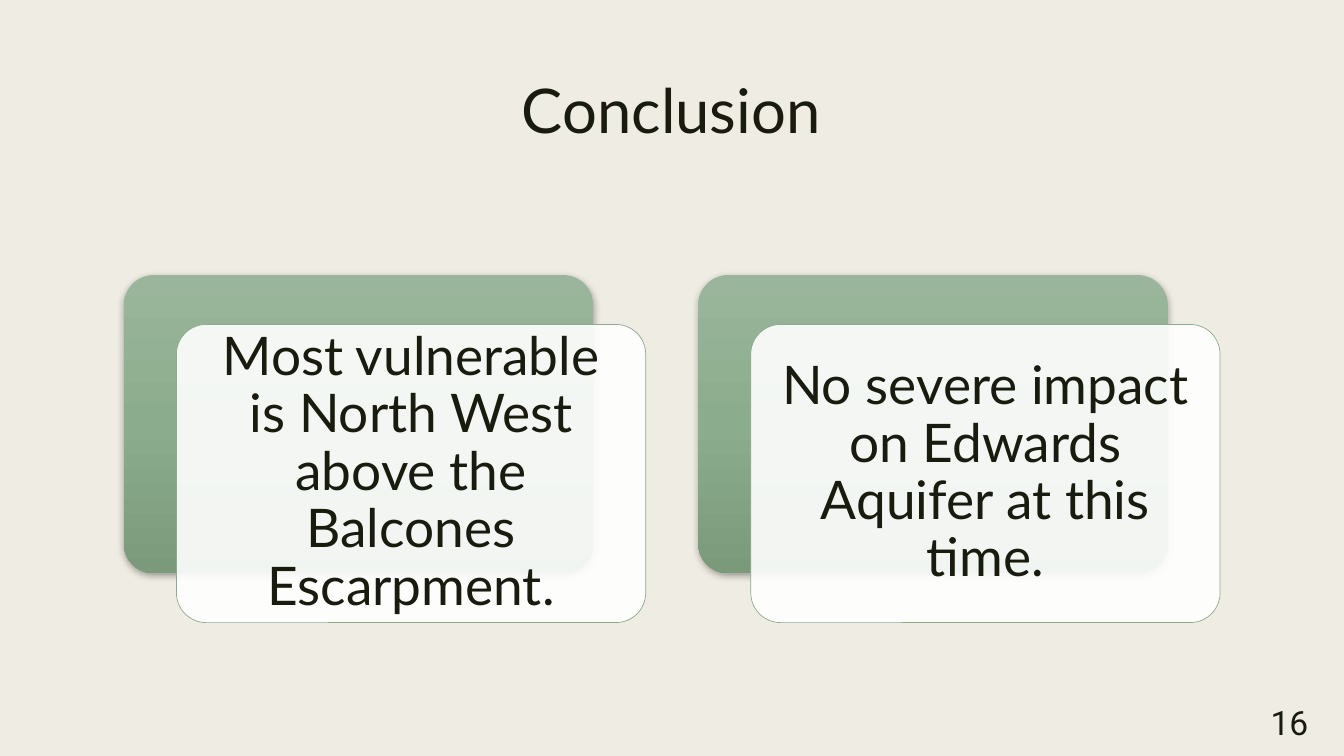
from lxml.etree import SubElement
from pptx import Presentation
from pptx.dml.color import RGBColor
from pptx.enum.shapes import MSO_SHAPE
from pptx.enum.text import MSO_ANCHOR, PP_ALIGN
from pptx.oxml.ns import qn
from pptx.util import Emu, Pt

PX = 9525  # EMU in one px, 96 px to the inch
COLORS = {
    "background": "EFEDE3",
    "text": "191B0E",
    "green_top": "9AB59B",
    "green_middle": "8CAD8D",
    "green_bottom": "7A9A7B",
    "outline": "8DAB8E",
    "front": "FFFFFF",
    "shadow": "000000",
}
CARD_W, CARD_H = 447, 284
CARD_LEFT, CARD_TOP, CARD_STEP = 118, 262, 547
FRONT_DX, FRONT_DY = 50, 47
TEXT_INDENT = 8
# Text of each card and the height of its text box
CARDS = [
    ("Most vulnerable is North West above the Balcones Escarpment.", 305),
    ("No severe impact on Edwards Aquifer at this time.", 252),
]


def px(*lengths):
    return [Emu(n * PX) for n in lengths]


def rgb(name):
    return RGBColor.from_string(COLORS[name])


def add_color(parent, name, alpha=None):
    clr = SubElement(parent, qn("a:srgbClr"), val=COLORS[name])
    if alpha is not None:
        SubElement(clr, qn("a:alpha"), val=str(alpha * 1000))


def add_text(slide, box, text, size, font="Lato", align=PP_ALIGN.CENTER,
             anchor=MSO_ANCHOR.MIDDLE, inset=5, spacing=None, before=0, wrap=True):
    tf = slide.shapes.add_textbox(*px(*box)).text_frame
    tf.word_wrap = wrap
    tf.vertical_anchor = anchor
    tf.margin_left, tf.margin_top, tf.margin_right, tf.margin_bottom = px(*[inset] * 4)
    p = tf.paragraphs[0]
    p.alignment = align
    p.line_spacing = spacing
    p.space_before = Pt(before)
    r = p.add_run()
    r.text = text
    r.font.size = Pt(size)
    r.font.name = font
    r.font.color.rgb = rgb("text")


def add_panel(slide, left, top):
    sp = slide.shapes.add_shape(MSO_SHAPE.ROUNDED_RECTANGLE,
                                *px(left, top, CARD_W, CARD_H))
    sp.adjustments[0] = 0.1
    sp.shadow.inherit = False
    return sp


def add_back(slide, left, top):
    sp = add_panel(slide, left, top)
    sp.line.fill.background()
    # Vertical gradient with three stops
    sp.fill.gradient()
    sp.fill.gradient_angle = 270
    stops = sp.element.spPr.find(".//" + qn("a:gsLst"))
    stops.clear()
    for pos, name in enumerate(("green_top", "green_middle", "green_bottom")):
        add_color(SubElement(stops, qn("a:gs"), pos=str(pos * 50000)), name)
    # Soft shadow below
    shadow = SubElement(sp.element.spPr.find(qn("a:effectLst")), qn("a:outerShdw"),
                        blurRad=str(Pt(5)), dist=str(Pt(1.5)), dir="5400000",
                        algn="ctr", rotWithShape="0")
    add_color(shadow, "shadow", 35)


def add_front(slide, left, top):
    sp = add_panel(slide, left, top)
    sp.fill.solid()
    sp.fill.fore_color.rgb = rgb("front")
    clr = sp.element.spPr.find(qn("a:solidFill")).find(qn("a:srgbClr"))
    SubElement(clr, qn("a:alpha"), val="90000")
    sp.line.color.rgb = rgb("outline")
    sp.line.width = Pt(0.5)


def add_card(slide, left, text, text_h):
    add_back(slide, left, CARD_TOP)
    front_left, front_top = left + FRONT_DX, CARD_TOP + FRONT_DY
    add_front(slide, front_left, front_top)
    box = (front_left + TEXT_INDENT, front_top + (CARD_H - text_h) // 2,
           CARD_W - 2 * TEXT_INDENT, text_h)
    add_text(slide, box, text, 38, inset=15, spacing=0.9, before=15)


def main():
    prs = Presentation()
    prs.slide_width, prs.slide_height = px(1280, 720)
    slide = prs.slides.add_slide(prs.slide_layouts[6])
    slide.background.fill.solid()
    slide.background.fill.fore_color.rgb = rgb("background")

    # Title
    add_text(slide, (67, 72, 1145, 156), "Conclusion", 44,
             anchor=MSO_ANCHOR.TOP, spacing=0.89)

    # Cards
    for i, (text, text_h) in enumerate(CARDS):
        add_card(slide, CARD_LEFT + i * CARD_STEP, text, text_h)

    # Slide number
    add_text(slide, (1205, 664, 46, 47), "16", 24, font="Roboto",
             align=PP_ALIGN.RIGHT, wrap=False)

    prs.save("out.pptx")


if __name__ == "__main__":
    main()
